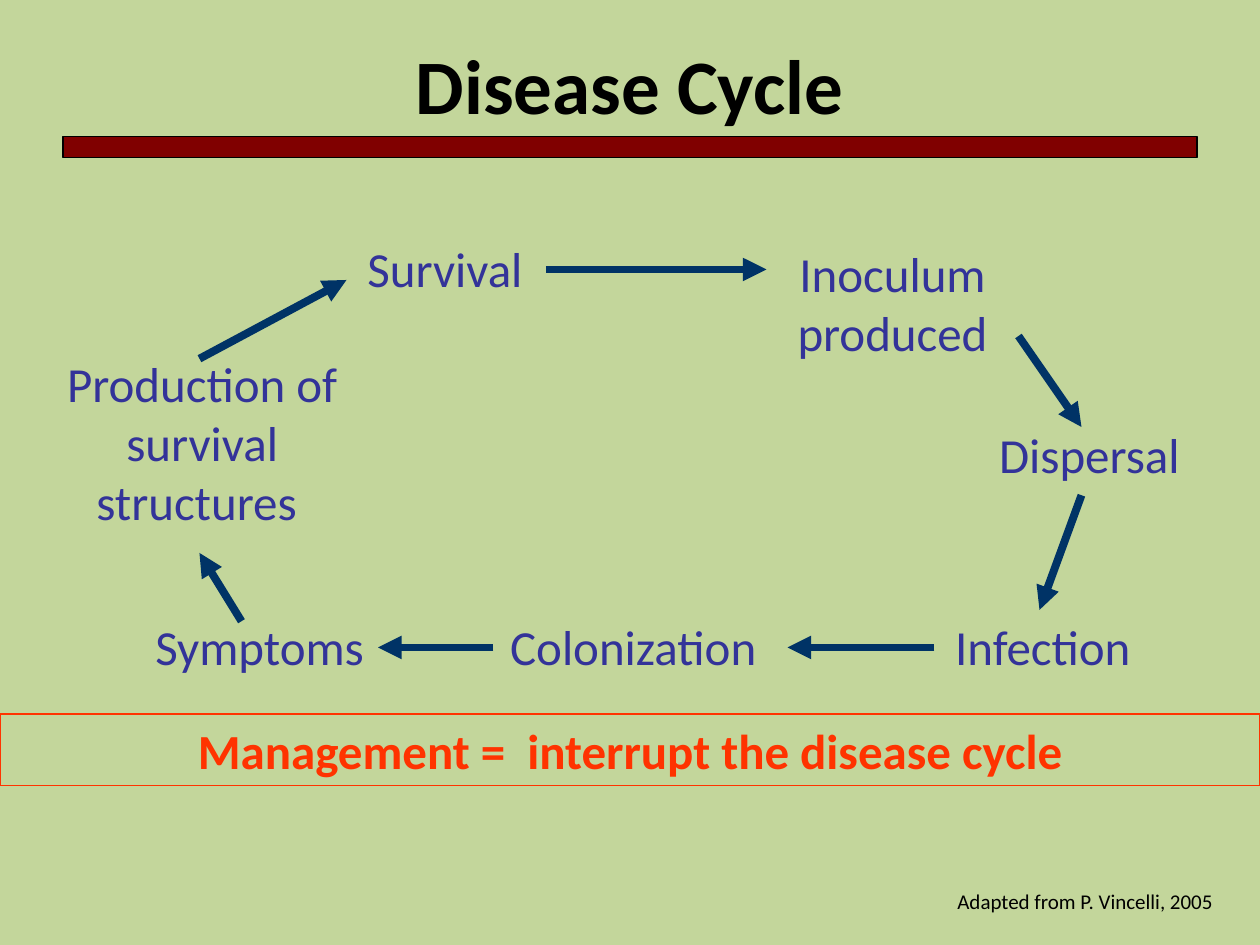
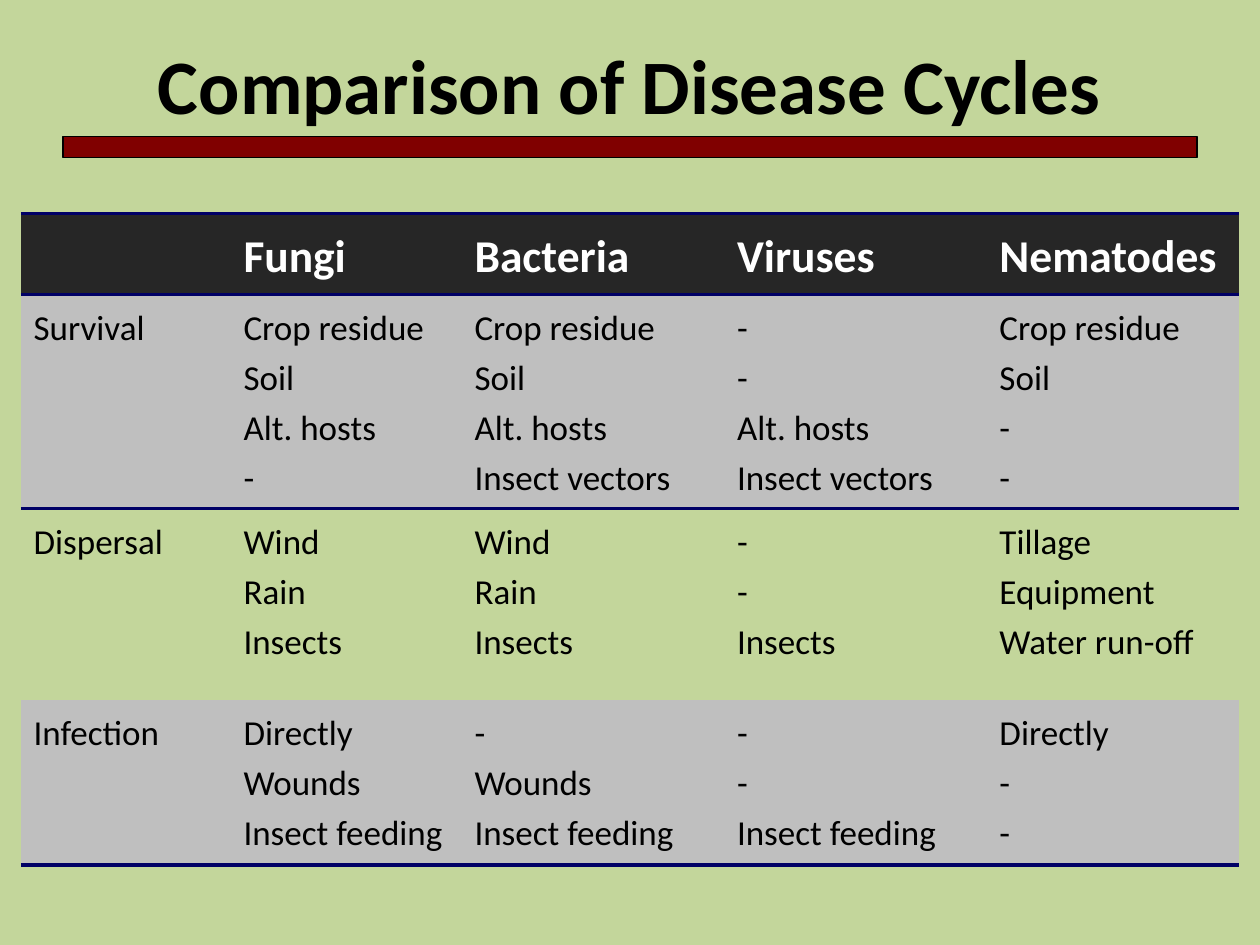
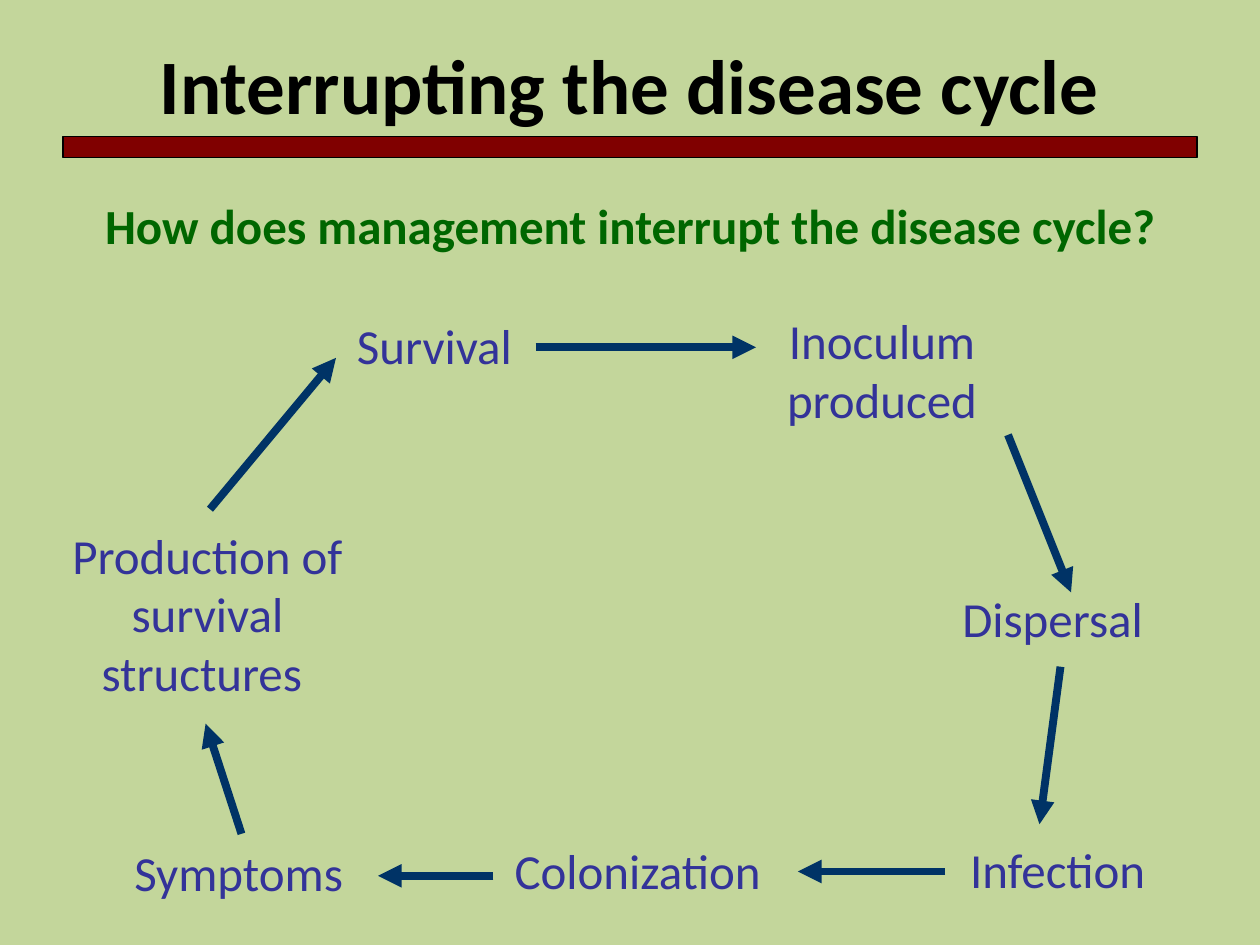
from dataclasses import dataclass

from lxml.etree import SubElement
from pptx import Presentation
from pptx.dml.color import RGBColor
from pptx.enum.shapes import MSO_CONNECTOR, MSO_SHAPE
from pptx.enum.text import MSO_ANCHOR, PP_ALIGN
from pptx.oxml.ns import qn
from pptx.util import Pt


@dataclass(frozen=True)
class Theme:
    face: str = "Calibri"
    ground: str = "C3D69B"
    band: str = "800000"
    ink: str = "000000"
    stage: str = "333399"
    arrow: str = "003366"
    alert: str = "FF3300"
    ask: str = "006600"
    head: str = "262626"
    head_ink: str = "FFFFFF"
    stripe: str = "BFBFBF"
    rule: str = "000066"
    title_size: float = 44
    body_size: float = 28
    head_size: float = 26
    cell_size: float = 20
    note_size: float = 12


T = Theme()
TITLE = dict(size=T.title_size, color=T.ink, bold=True)
STAGE = dict(size=T.body_size, color=T.stage)
ALERT = dict(size=T.body_size, color=T.alert, bold=True)
ASK = dict(size=T.body_size, color=T.ask, bold=True)
NOTE = dict(size=T.note_size, color=T.ink)
HEAD = dict(size=T.head_size, color=T.head_ink, bold=True)
CELL = dict(size=T.cell_size, color=T.ink)

PLAIN_TABLE = "{2D5ABB26-0587-4C30-8999-92F81FD0307C}"

# Each stage of the cycle: text, width, height
STAGES = [
    ("Survival", 103.5, 41),
    ("Inoculum produced", 192, 75),
    ("Dispersal", 171, 41),
    ("Infection ", 171, 41),
    ("Colonization ", 171, 41),
    ("Symptoms ", 171, 41),
    ("Production of survival structures ", 171, 108),
]

# Left and top of each stage, then the arrows as x1, y1, x2, y2
BASIC_SPOTS = [(202.5, 132.5), (414, 135.5), (537, 239), (513.5, 348.5),
               (279.5, 348.5), (66, 348.5), (30, 198.5)]
BASIC_ARROWS = [(312, 154, 438, 154), (582, 192, 618, 244),
                (618, 283, 594, 348.5), (534, 370, 450, 370),
                (282, 370, 216, 370), (138, 355, 114, 316),
                (114, 205, 198, 160)]
BREAK_SPOTS = [(196.5, 177), (408, 174), (516, 332.5), (522, 476),
               (282, 476.5), (54, 478), (33, 296.5)]
BREAK_ARROWS = [(306, 198.5, 432, 198.5), (576, 248.5, 612, 338.5),
                (606, 381, 594, 471), (540, 498, 456, 498),
                (282, 500.5, 216, 500.5), (138, 476.5, 117.5, 413.5),
                (120, 291, 192, 204.5)]

GROUPS = ["", "Fungi", "Bacteria", "Viruses", "Nematodes"]
TRAITS = [
    ["Survival", "Crop residue\nSoil\nAlt. hosts\n-",
     "Crop residue\nSoil\nAlt. hosts\nInsect vectors",
     "-\n-\nAlt. hosts\nInsect vectors", "Crop residue\nSoil\n-\n-"],
    ["Dispersal", "Wind\nRain\nInsects", "Wind\nRain\nInsects",
     "-\n-\nInsects", "Tillage\nEquipment\nWater run-off"],
    ["Infection", "Directly\nWounds\nInsect feeding",
     "-\nWounds\nInsect feeding", "-\n-\nInsect feeding",
     "Directly\n-\n-"],
]
COLS = [120, 132, 150, 150, 144]
ROWS = [46.3, 122.3, 109.2, 94.6]


def rgb(code):
    return RGBColor.from_string(code)


def points(*values):
    return [Pt(v) for v in values]


def set_all(item, values):
    for name, value in values.items():
        setattr(item, name, value)


def write(frame, text, style, align=PP_ALIGN.CENTER, gap=0):
    """Fill a text frame, one paragraph a line, with gap between them."""
    for i, line in enumerate(text.split("\n")):
        para = frame.add_paragraph() if i else frame.paragraphs[0]
        para.alignment = align
        if i and gap:
            para.space_before = Pt(gap)
        run = para.add_run()
        run.text = line
        set_all(run.font, dict(name=T.face, size=Pt(style["size"]),
                               bold=style.get("bold", False)))
        run.font.color.rgb = rgb(style["color"])


def label(slide, text, at, style, align=PP_ALIGN.CENTER, wrap=True):
    frame = slide.shapes.add_textbox(*points(*at)).text_frame
    frame.word_wrap = wrap
    write(frame, text, style, align)


def box(slide, at, line, width, fill=None):
    shape = slide.shapes.add_shape(MSO_SHAPE.RECTANGLE, *points(*at))
    shape.shadow.inherit = False
    if fill:
        shape.fill.solid()
        shape.fill.fore_color.rgb = rgb(fill)
    else:
        shape.fill.background()
    shape.line.color.rgb = rgb(line)
    shape.line.width = Pt(width)
    return shape


def arrow(slide, ends):
    link = slide.shapes.add_connector(MSO_CONNECTOR.STRAIGHT, *points(*ends))
    link.line.color.rgb = rgb(T.arrow)
    link.line.width = Pt(4.5)
    SubElement(link.line._get_or_add_ln(), qn("a:tailEnd"), type="triangle")
    SubElement(link._element.spPr, qn("a:effectLst"))


def cycle(slide, spots, arrows):
    for (text, wide, high), spot in zip(STAGES, spots):
        label(slide, text, (*spot, wide, high), STAGE,
              wrap=text != "Survival")
    for ends in arrows:
        arrow(slide, ends)


def edge(cell, side):
    props = cell._tc.get_or_add_tcPr()
    line = SubElement(props, qn(f"a:ln{side}"), w=str(Pt(2.25)))
    fill = SubElement(line, qn("a:solidFill"))
    SubElement(fill, qn("a:srgbClr"), val=T.rule)


def paint(cell, color, alpha=None):
    cell.fill.solid()
    cell.fill.fore_color.rgb = rgb(color)
    if alpha:
        tint = cell._tc.tcPr.find(".//" + qn("a:srgbClr"))
        SubElement(tint, qn("a:alpha"), val=str(alpha * 1000))


def grid(slide):
    """Table of traits, with rules above and below the head and at the end."""
    data = [GROUPS] + TRAITS
    table = slide.shapes.add_table(
        len(ROWS), len(COLS), *points(12, 122, sum(COLS), sum(ROWS))).table
    table._tbl.tblPr.find(qn("a:tableStyleId")).text = PLAIN_TABLE
    table.horz_banding = False
    for col, wide in zip(table.columns, COLS):
        col.width = Pt(wide)
    for r, (row, high) in enumerate(zip(table.rows, ROWS)):
        row.height = Pt(high)
        for cell, text in zip(row.cells, data[r]):
            set_all(cell, dict(
                margin_left=Pt(7.2), margin_right=Pt(7.2),
                margin_top=Pt(7.2), margin_bottom=Pt(4),
                vertical_anchor=MSO_ANCHOR.TOP if r else MSO_ANCHOR.MIDDLE))
            if r < 2:
                edge(cell, "T")
            if r in (0, len(ROWS) - 1):
                edge(cell, "B")
            if r == 0:
                paint(cell, T.head)
            elif r % 2:
                paint(cell, T.stripe, 50)
            else:
                cell.fill.background()
            if text:
                write(cell.text_frame, text, CELL if r else HEAD,
                      PP_ALIGN.LEFT, gap=4)


def page(deck, title):
    """New slide with the shared band and title."""
    slide = deck.slides.add_slide(deck.slide_layouts[6])
    fill = slide.background.fill
    fill.solid()
    fill.fore_color.rgb = rgb(T.ground)
    box(slide, (36, 78, 648, 12), T.ink, 1, T.band)
    label(slide, title, (0, 18, 720, 60), TITLE)
    return slide


def main():
    deck = Presentation()
    deck.slide_width, deck.slide_height = points(720, 540)

    slide = page(deck, "Disease Cycle")
    cycle(slide, BASIC_SPOTS, BASIC_ARROWS)
    label(slide, "Adapted from P. Vincelli, 2005", (540, 504, 162, 22), NOTE,
          PP_ALIGN.LEFT, wrap=False)
    goal = box(slide, (0, 408, 720, 41), T.alert, 0.75)
    goal.text_frame.vertical_anchor = MSO_ANCHOR.TOP
    write(goal.text_frame, "Management =  interrupt the disease cycle", ALERT)

    grid(page(deck, "Comparison of Disease Cycles"))

    slide = page(deck, "Interrupting the disease cycle")
    cycle(slide, BREAK_SPOTS, BREAK_ARROWS)
    label(slide, "How does management interrupt the disease cycle?",
          (0, 108, 720, 41), ASK)

    deck.save("out.pptx")


if __name__ == "__main__":
    main()
